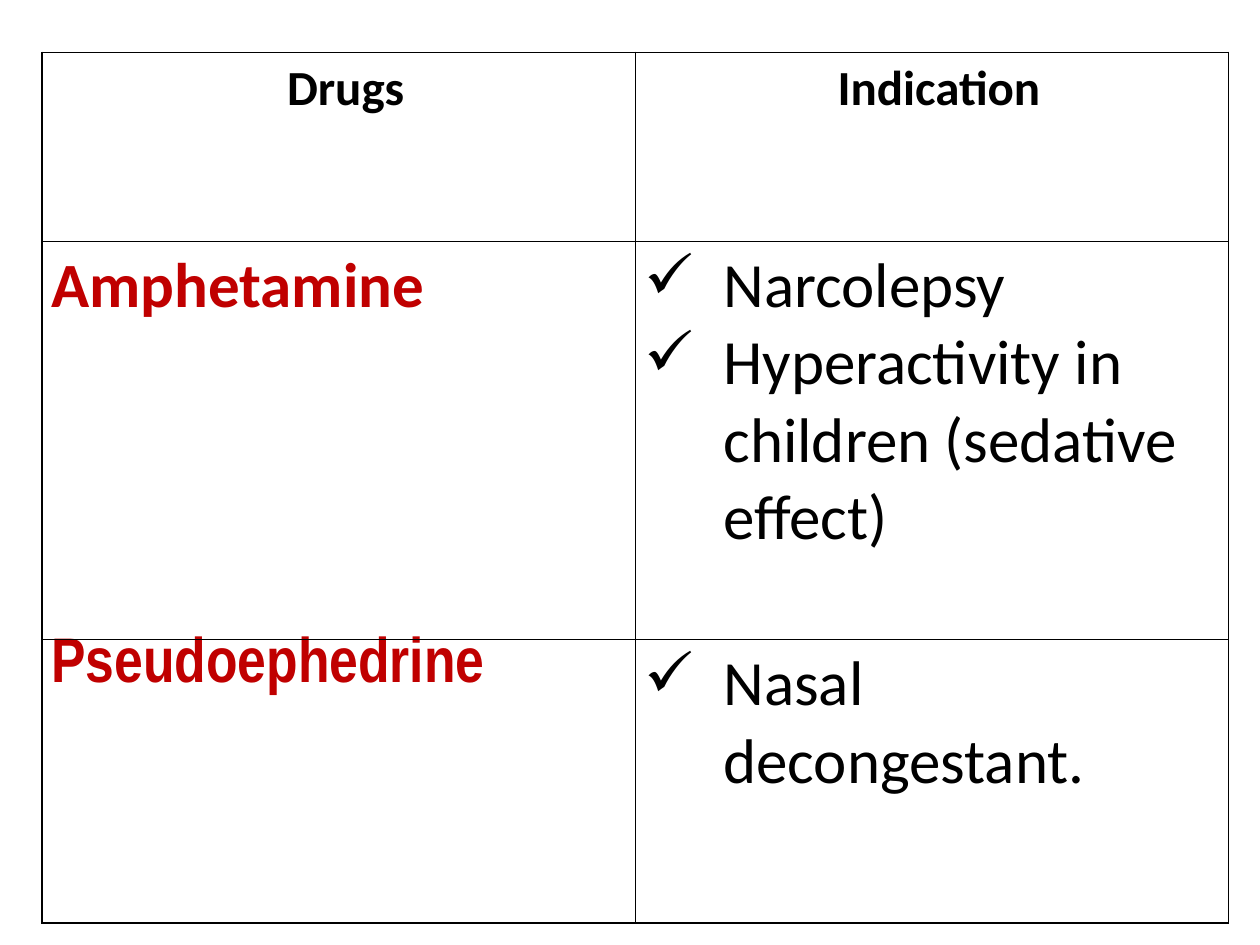
from dataclasses import dataclass

from lxml.etree import SubElement
from pptx import Presentation
from pptx.dml.color import RGBColor
from pptx.enum.text import PP_ALIGN
from pptx.oxml.ns import qn
from pptx.util import Pt


@dataclass(frozen=True)
class Theme:
    ink: str = "000000"
    drug: str = "C00000"
    font: str = "Calibri"
    narrow: str = "Arial Narrow"
    head: int = 28
    body: int = 36


THEME = Theme()
HEADS = ["Drugs", "Indication"]
DRUGS = [
    ("Amphetamine", THEME.font,
     ["Narcolepsy", "Hyperactivity in children (sedative effect)"]),
    ("Pseudoephedrine", THEME.narrow, ["Nasal decongestant."]),
]
LEFT, TOP, WIDTH = 24, 30, 678
HEIGHTS = [108, 227.5, 162]
INDENT = 45


def style(para, size, color=THEME.ink, font=THEME.font, bold=False):
    para.font.size = Pt(size)
    para.font.name = font
    para.font.bold = bold
    para.font.color.rgb = RGBColor.from_string(color)


def frame(cell):
    """Give the cell thin borders, no fill and its margins."""
    props = cell._tc.get_or_add_tcPr()
    for side in ("lnL", "lnR", "lnT", "lnB"):
        line = SubElement(props, qn(f"a:{side}"), w=str(Pt(1)))
        fill = SubElement(line, qn("a:solidFill"))
        SubElement(fill, qn("a:srgbClr"), val=THEME.ink)
    cell.fill.background()
    cell.margin_left = cell.margin_right = Pt(5.4)
    cell.margin_top = cell.margin_bottom = Pt(3.6)


def check(para):
    """Hang the paragraph from a check mark."""
    props = para._p.get_or_add_pPr()
    props.set("marL", str(Pt(INDENT)))
    props.set("indent", str(Pt(-INDENT)))
    SubElement(props, qn("a:buChar"), char="✓")


def fill_head(cell, text):
    para = cell.text_frame.paragraphs[0]
    para.text = text
    para.alignment = PP_ALIGN.CENTER
    style(para, THEME.head, bold=True)
    cell.margin_left = Pt(13.4)


def fill_drug(cell, name, font):
    para = cell.text_frame.paragraphs[0]
    para.text = name
    style(para, THEME.body, THEME.drug, font, bold=True)
    if font == THEME.narrow:
        cell.margin_top = 0
        para.line_spacing = 0.9


def fill_uses(cell, uses):
    cell.text = "\n".join(uses)
    for para in cell.text_frame.paragraphs:
        check(para)
        style(para, THEME.body)


def add_grid(slide):
    """Add the framed, empty table."""
    shape = slide.shapes.add_table(
        len(HEIGHTS), len(HEADS), Pt(LEFT), Pt(TOP), Pt(WIDTH), Pt(sum(HEIGHTS)))
    table = shape.table
    table.first_row = table.horz_banding = False
    for row, height in zip(table.rows, HEIGHTS):
        row.height = Pt(height)
    for cell in table.iter_cells():
        frame(cell)
    return table


def main():
    deck = Presentation()
    deck.slide_width, deck.slide_height = Pt(720), Pt(540)
    slide = deck.slides.add_slide(deck.slide_layouts.get_by_name("Blank"))
    table = add_grid(slide)
    for col, text in enumerate(HEADS):
        fill_head(table.cell(0, col), text)
    for row, (name, font, uses) in enumerate(DRUGS, 1):
        fill_drug(table.cell(row, 0), name, font)
        fill_uses(table.cell(row, 1), uses)
    deck.save("out.pptx")


if __name__ == "__main__":
    main()
